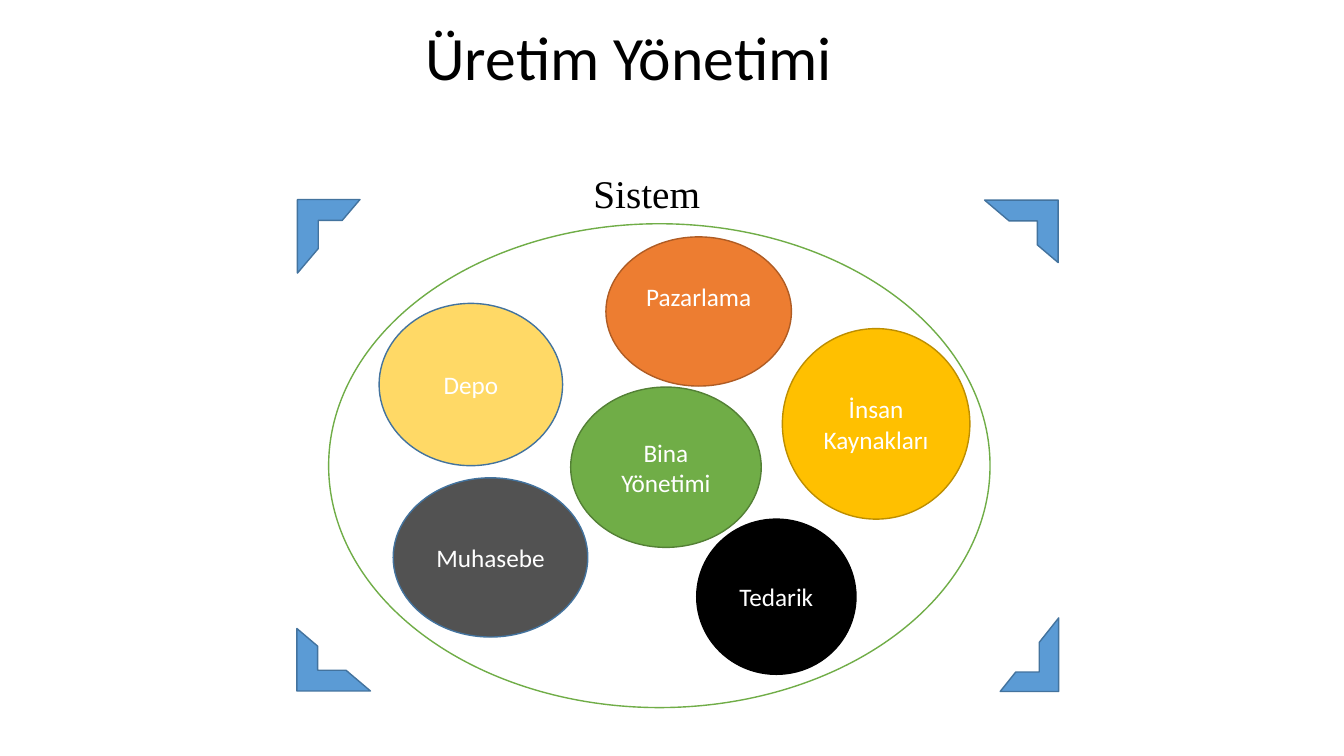
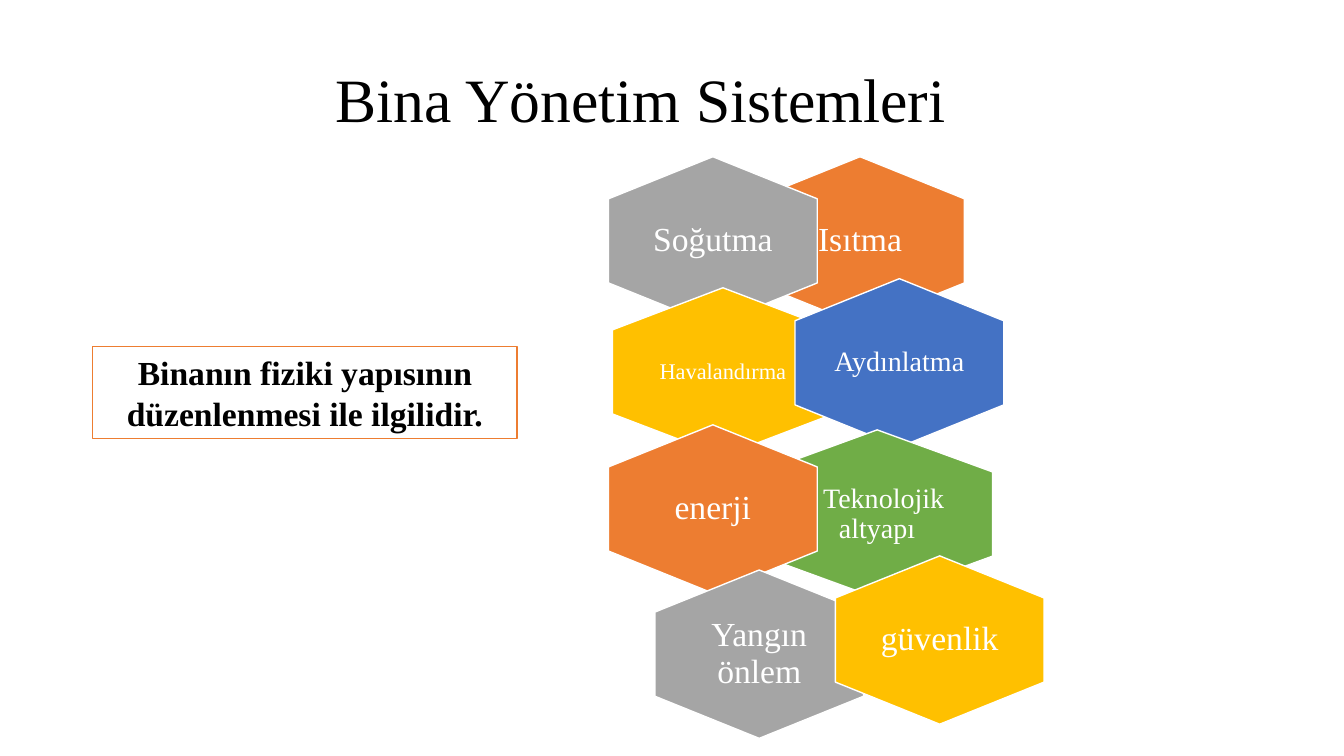
from pptx import Presentation
from pptx.dml.color import RGBColor
from pptx.enum.shapes import MSO_SHAPE
from pptx.enum.text import MSO_ANCHOR, PP_ALIGN
from pptx.util import Inches, Pt

ELLIPSE, HEXAGON = MSO_SHAPE.OVAL, MSO_SHAPE.HEXAGON
HALF_FRAME, RECTANGLE = MSO_SHAPE.HALF_FRAME, MSO_SHAPE.RECTANGLE
LEFT, CENTER, MIDDLE = PP_ALIGN.LEFT, PP_ALIGN.CENTER, MSO_ANCHOR.MIDDLE

SANS, SERIF = "Calibri", "Times New Roman"
WHITE = RGBColor(0xFF, 0xFF, 0xFF)
BLACK = RGBColor(0x00, 0x00, 0x00)
ORANGE = RGBColor(0xED, 0x7D, 0x31)
DARK_ORANGE = RGBColor(0xAF, 0x5C, 0x24)
GOLD = RGBColor(0xFF, 0xC0, 0x00)
DARK_GOLD = RGBColor(0xBD, 0x8E, 0x00)
PALE_GOLD = RGBColor(0xFF, 0xD9, 0x66)
GREEN = RGBColor(0x70, 0xAD, 0x47)
DARK_GREEN = RGBColor(0x53, 0x80, 0x35)
SKY = RGBColor(0x5B, 0x9B, 0xD5)
DARK_SKY = RGBColor(0x43, 0x73, 0x9E)
BLUE = RGBColor(0x44, 0x72, 0xC4)
GRAY = RGBColor(0xA5, 0xA5, 0xA5)
CHARCOAL = RGBColor(0x52, 0x52, 0x52)


def write(shape, text, size, font, color, align=CENTER, spacing=1.0):
    """Put one formatted paragraph in a shape and return the paragraph."""
    shape.text_frame.word_wrap = True
    paragraph = shape.text_frame.paragraphs[0]
    paragraph.text = text
    paragraph.alignment = align
    paragraph.line_spacing = spacing
    run_font = paragraph.runs[0].font
    run_font.size, run_font.name = Pt(size), font
    run_font.color.rgb = color
    return paragraph


def add_outlined(slide, kind, box, fill, line):
    """Add a flat preset shape with a one-point outline."""
    shape = slide.shapes.add_shape(kind, *map(Inches, box))
    shape.shadow.inherit = False
    shape.fill.solid()
    shape.fill.fore_color.rgb = fill
    shape.line.color.rgb = line
    shape.line.width = Pt(1)
    return shape


presentation = Presentation()
presentation.slide_width, presentation.slide_height = Inches(13.33), Inches(7.5)

# Slides and titles
slides = []
for title_text, font, box in [
    ("Üretim Yönetimi", SANS, (4.12, 0.21, 4.89, 0.79)),
    ("Bina Yönetim Sistemleri", SERIF, (3.23, 0.29, 6.87, 1.45)),
]:
    slide = presentation.slides.add_slide(presentation.slide_layouts[5])
    title = slide.shapes.title
    title.left, title.top, title.width, title.height = map(Inches, box)
    title.text_frame.vertical_anchor = MIDDLE
    write(title, title_text, 44, font, BLACK, LEFT, 0.9)
    slides.append(slide)
management, building = slides

# Departments inside the system boundary
add_outlined(management, ELLIPSE, (3.26, 2.22, 6.56, 4.8), WHITE, GREEN)
departments = [
    ("İnsan Kaynakları", (7.76, 3.26, 1.86, 1.89), GOLD, DARK_GOLD),
    ("Bina Yönetimi", (5.66, 3.84, 1.89, 1.59), GREEN, DARK_GREEN),
    ("Pazarlama", (6.01, 2.35, 1.84, 1.48), ORANGE, DARK_ORANGE),
    ("Muhasebe", (3.9, 4.74, 1.93, 1.58), CHARCOAL, DARK_SKY),
    ("Depo", (3.76, 3.01, 1.82, 1.61), PALE_GOLD, DARK_SKY),
    ("Tedarik", (6.91, 5.15, 1.58, 1.54), BLACK, BLACK),
]
for name, box, fill, line in departments:
    department = add_outlined(management, ELLIPSE, box, fill, line)
    write(department, name, 18, SANS, WHITE)
    if name == "Pazarlama":
        department.text_frame.margin_bottom = Inches(0.35)

corners = [
    (0, (2.95, 1.98, 0.62, 0.73)),
    (270, (3, 6.18, 0.62, 0.73)),
    (90, (9.82, 1.93, 0.62, 0.73)),
    (180, (9.92, 6.13, 0.58, 0.73)),
]
for rotation, box in corners:
    corner = add_outlined(management, HALF_FRAME, box, SKY, DARK_SKY)
    corner.rotation = rotation

system_label = management.shapes.add_textbox(
    Inches(4.98), Inches(1.63), Inches(2.87), Inches(0.57))
write(system_label, "Sistem", 28, SERIF, BLACK)

# Honeycomb of building systems: name, centre, width, fill, text size
HEXAGON_HEIGHT, LABEL_HEIGHT = 1.67, 1.11
systems = [
    ("Isıtma", 8.53, 2.39, 2.07, ORANGE, 24),
    ("Soğutma", 7.07, 2.39, 2.07, GRAY, 24),
    ("Havalandırma", 7.17, 3.69, 2.19, GOLD, 16),
    ("Aydınlatma", 8.92, 3.6, 2.07, BLUE, 20),
    ("Teknolojik altyapı", 8.7, 5.1, 2.29, GREEN, 20),
    ("enerji", 7.07, 5.05, 2.07, ORANGE, 24),
    ("Yangın önlem", 7.53, 6.49, 2.07, GRAY, 24),
    ("güvenlik", 9.32, 6.35, 2.07, GOLD, 24),
]
for name, center_x, center_y, width, fill, size in systems:
    # A quarter turn swaps the sides of the hexagon
    box = (center_x - HEXAGON_HEIGHT / 2, center_y - width / 2, HEXAGON_HEIGHT, width)
    hexagon = add_outlined(building, HEXAGON, box, fill, WHITE)
    hexagon.rotation = 90

    label_width = width * 2 / 3
    label = building.shapes.add_textbox(
        Inches(center_x - label_width / 2), Inches(center_y - LABEL_HEIGHT / 2),
        Inches(label_width), Inches(LABEL_HEIGHT))
    frame = label.text_frame
    frame.margin_left = frame.margin_right = frame.margin_top = frame.margin_bottom = 0
    frame.vertical_anchor = MIDDLE
    paragraph = write(label, name, size, SERIF, WHITE, spacing=0.9)
    if name == "Teknolojik altyapı":
        paragraph._p.get_or_add_pPr().set("indent", str(Inches(0.13)))

note = add_outlined(building, RECTANGLE, (0.92, 3.44, 4.21, 0.91), WHITE, ORANGE)
note_paragraph = write(
    note, "Binanın fiziki yapısının düzenlenmesi ile ilgilidir.", 24, SERIF, BLACK)
note_paragraph.runs[0].font.bold = True

presentation.save("out.pptx")
